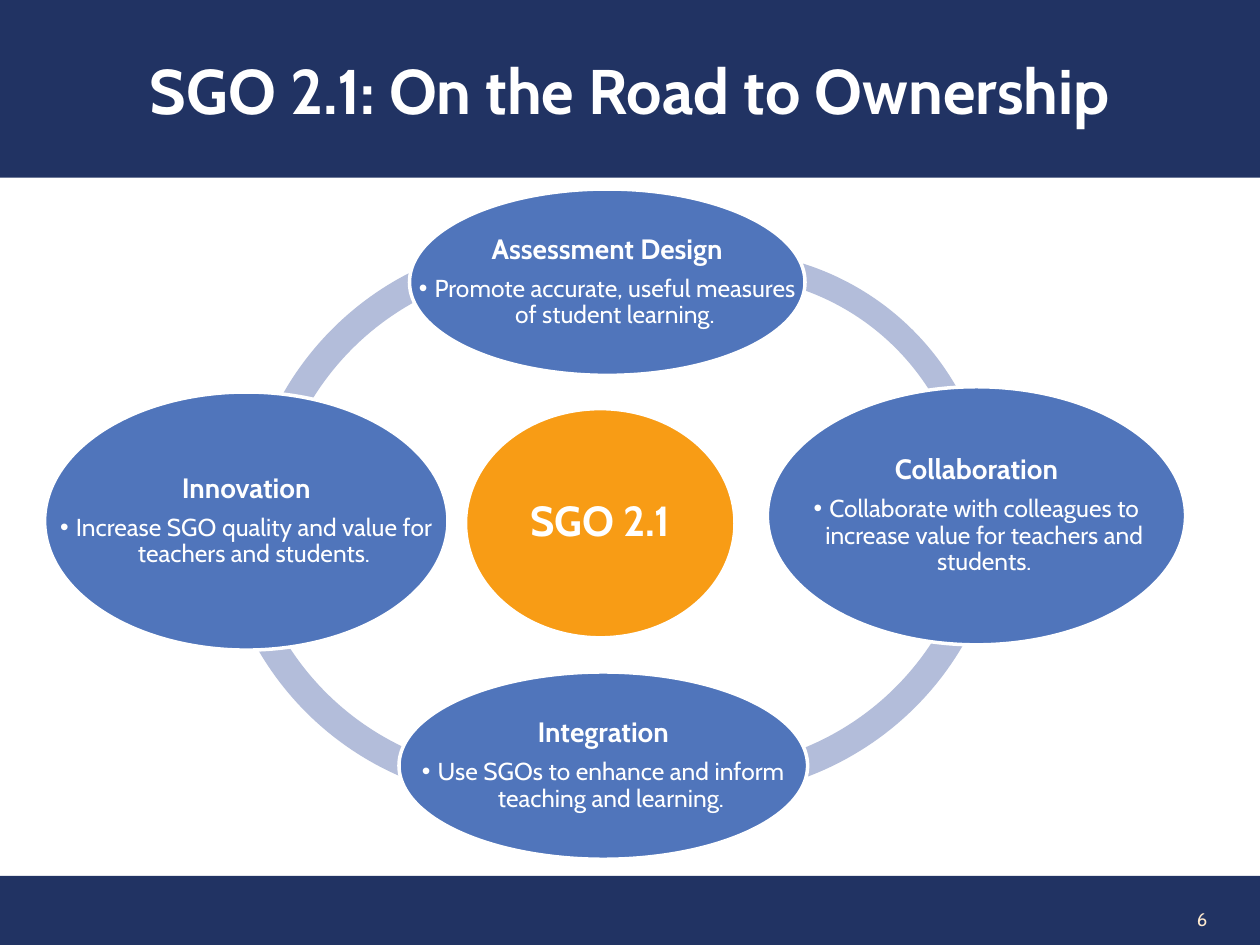
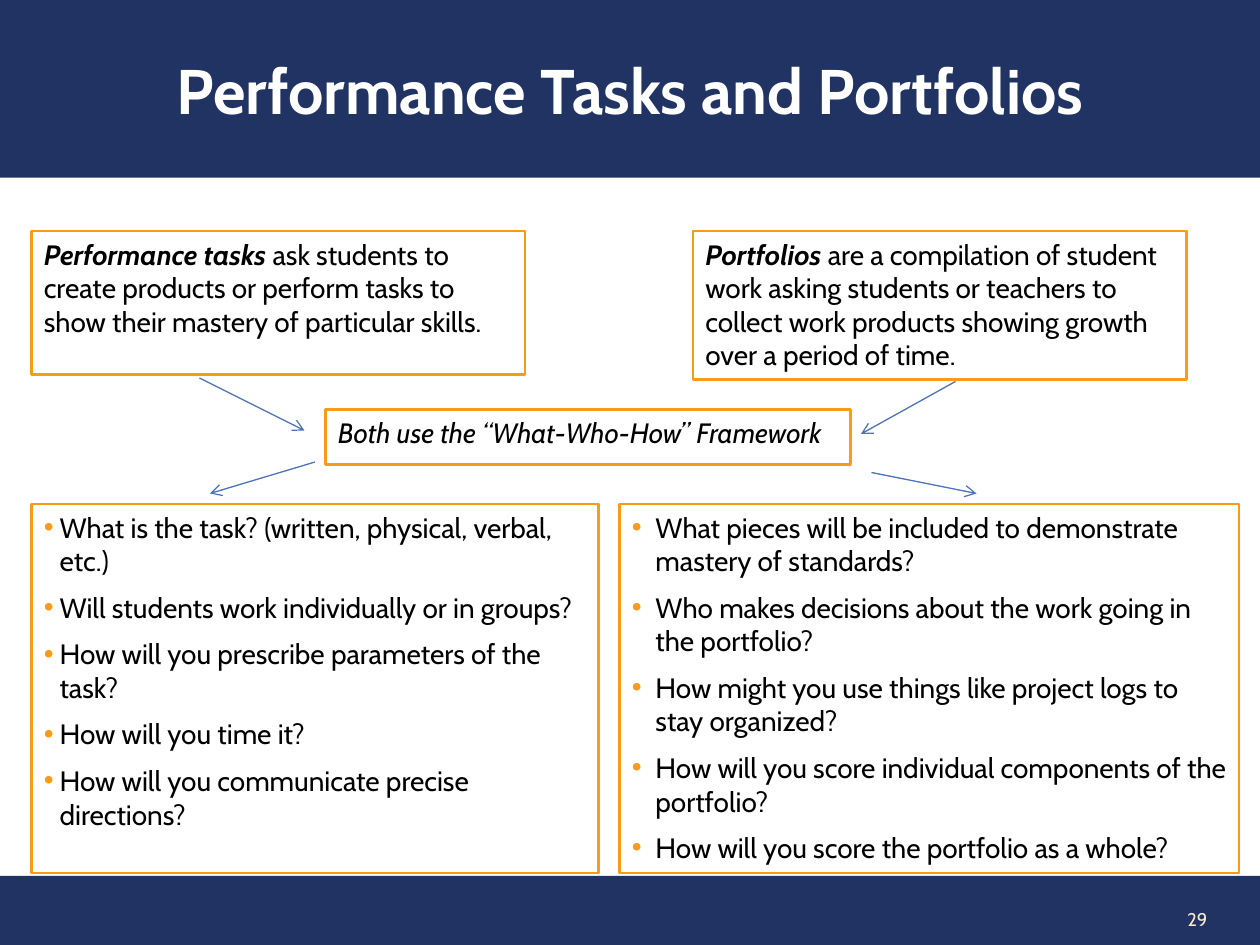
from lxml.etree import SubElement
from pptx import Presentation
from pptx.dml.color import RGBColor
from pptx.enum.shapes import MSO_CONNECTOR as Link, MSO_SHAPE as Shape
from pptx.enum.text import MSO_ANCHOR as Anchor, PP_ALIGN as Align
from pptx.oxml.ns import qn
from pptx.util import Pt

NAVY = RGBColor(0x21, 0x33, 0x63)
CREAM = RGBColor(0xFE, 0xEA, 0xCE)
WHITE = RGBColor(0xFF, 0xFF, 0xFF)
BLACK = RGBColor(0, 0, 0)
PALE = RGBColor(0xB3, 0xBD, 0xDA)
BLUE = RGBColor(0x50, 0x75, 0xBB)
ARROW = RGBColor(0x4C, 0x72, 0xB9)
GOLD = RGBColor(0xF8, 0x9C, 0x15)
FONT = "Cabin"
WIDE, HIGH = 720, 540

ARCS = [
    (298, 284, 174, 107, 156),
    (313, 311, 174, 203, 250),
    (412.5, 298, 154.5, 281, 336),
    (400, 281, 174, 24, 76),
]
NODES = [
    ((234, 108, 226, 106.5), "Assessment Design",
     "Promote accurate, useful measures of student learning."),
    ((438.5, 221, 239, 147.5), "Collaboration",
     "Collaborate with colleagues to increase value for teachers and students."),
    ((228, 384, 233.5, 107), "Integration",
     "Use SGOs to enhance and inform teaching and learning."),
    ((25.5, 224, 230.5, 147.5), "Innovation",
     "Increase SGO quality and value for teachers and students."),
]
INTROS = [
    ((18, 132, 282, 82), "Performance tasks",
     " ask students to create products or perform tasks to show their mastery"
     " of particular skills."),
    ((396, 132, 282, 85), "Portfolios",
     " are a compilation of student work asking students or teachers to collect"
     " work products showing growth over a period of time."),
]
ARROWS = [
    (114, 216, 174, 246),
    (546, 218, 492, 248),
    (180, 264, 120, 282),
    (498, 270, 558, 282),
]
LISTS = [
    ((18, 288, 324, 211), 9, [
        "What is the task? (written, physical, verbal, etc.)",
        "Will students work individually or in groups?",
        "How will you prescribe parameters of the task?",
        "How will you time it?",
        "How will you communicate precise directions?",
    ]),
    ((354, 288, 354, 211), 13.5, [
        "What pieces will be included to demonstrate mastery of standards?",
        "Who makes decisions about the work going in the portfolio?",
        "How might you use things like project logs to stay organized?",
        "How will you score individual components of the portfolio?",
        "How will you score the portfolio as a whole?",
    ]),
]


def points(box):
    return [Pt(n) for n in box]


def draw(slide, kind, box, fill=None, line=None, width=1.5):
    shape = slide.shapes.add_shape(kind, *points(box))
    shape.shadow.inherit = False
    if fill is None:
        shape.fill.background()
    else:
        shape.fill.solid()
        shape.fill.fore_color.rgb = fill
    if line is None:
        shape.line.fill.background()
    else:
        shape.line.color.rgb = line
        shape.line.width = Pt(width)
    return shape


def setup(shape, anchor, side=7.2, top=3.6):
    frame = shape.text_frame
    frame.word_wrap = True
    frame.vertical_anchor = anchor
    frame.margin_left = frame.margin_right = Pt(side)
    frame.margin_top = frame.margin_bottom = Pt(top)
    return frame


def write(para, text, size, color, align=Align.LEFT, bold=False, slant=False):
    para.alignment = align
    run = para.add_run()
    run.text = text
    font = run.font
    font.name, font.size = FONT, Pt(size)
    font.bold, font.italic = bold, slant
    font.color.rgb = color


def bullet(para, indent, color):
    props = para._p.get_or_add_pPr()
    props.set("marL", str(Pt(indent)))
    props.set("indent", str(-Pt(indent)))
    tint = SubElement(props, qn("a:buClr"))
    SubElement(tint, qn("a:srgbClr")).set("val", str(color))
    SubElement(props, qn("a:buFont")).set("typeface", "Arial")
    SubElement(props, qn("a:buChar")).set("char", "•")


def base(deck, title, number):
    slide = deck.slides.add_slide(deck.slide_layouts[6])
    draw(slide, Shape.RECTANGLE, (0, 500.5, WIDE, HIGH - 500.5), NAVY)
    page = slide.shapes.add_textbox(*points((592, 510.5, 105, 29)))
    frame = setup(page, Anchor.MIDDLE)
    write(frame.paragraphs[0], str(number), 10.5, CREAM, Align.RIGHT)
    band = draw(slide, Shape.RECTANGLE, (0, 0, WIDE, 101.5), NAVY)
    frame = setup(band, Anchor.MIDDLE, 7.2, 7.2)
    write(frame.paragraphs[0], title, 36, WHITE, Align.CENTER, True)
    return slide


def arc(slide, mid, level, radius, start, end):
    box = (mid - radius, level - radius, 2 * radius, 2 * radius)
    shape = draw(slide, Shape.BLOCK_ARC, box, PALE)
    for i, value in enumerate((start * 0.6, end * 0.6, 0.046)):
        shape.adjustments[i] = value


def node(slide, box, head, body=None, fill=BLUE, size=16):
    left, top, width, height = box
    draw(slide, Shape.OVAL, box, fill, WHITE, 2)
    span = 224
    area = (left + (width - span) / 2, top, span, height)
    frame = setup(slide.shapes.add_textbox(*points(area)), Anchor.MIDDLE, 1.5, 1.5)
    para = frame.paragraphs[0]
    para.line_spacing = 0.9
    write(para, head, size, WHITE, Align.CENTER, True)
    if body:
        para.space_after = Pt(6)
        para = frame.add_paragraph()
        bullet(para, 9, WHITE)
        para.line_spacing = 0.9
        para.space_after = Pt(2)
        write(para, body, 14, WHITE, Align.CENTER)


def panel(slide, box):
    return setup(draw(slide, Shape.RECTANGLE, box, line=GOLD), Anchor.TOP)


def intro(slide, box, term, text):
    para = panel(slide, box).paragraphs[0]
    write(para, term, 16, BLACK, bold=True, slant=True)
    write(para, text, 16, BLACK)


def listing(slide, box, indent, items):
    frame = panel(slide, box)
    for i, item in enumerate(items):
        para = frame.add_paragraph() if i else frame.paragraphs[0]
        bullet(para, indent, GOLD)
        if i:
            para.space_before = Pt(7.4)
        write(para, item, 16, BLACK)


def arrow(slide, *ends):
    link = slide.shapes.add_connector(Link.STRAIGHT, *points(ends))
    link.line.color.rgb = ARROW
    link.line.width = Pt(0.75)
    SubElement(link.line._get_or_add_ln(), qn("a:tailEnd")).set("type", "arrow")
    SubElement(link._element.spPr, qn("a:effectLst"))


def cycle(deck):
    slide = base(deck, "SGO 2.1: On the Road to Ownership", 6)
    for item in ARCS:
        arc(slide, *item)
    node(slide, (266, 233.5, 154, 131), "SGO 2.1", fill=GOLD, size=24)
    for item in NODES:
        node(slide, *item)


def tasks(deck):
    slide = base(deck, "Performance Tasks and Portfolios", 29)
    for item in INTROS:
        intro(slide, *item)
    for ends in ARROWS:
        arrow(slide, *ends)
    hub = panel(slide, (186, 234, 300, 31.5))
    write(hub.paragraphs[0], "Both use the “What-Who-How” Framework",
          16, BLACK, slant=True)
    for item in LISTS:
        listing(slide, *item)


def main():
    deck = Presentation()
    deck.slide_width, deck.slide_height = Pt(WIDE), Pt(HIGH)
    cycle(deck)
    tasks(deck)
    deck.save("out.pptx")


if __name__ == "__main__":
    main()
